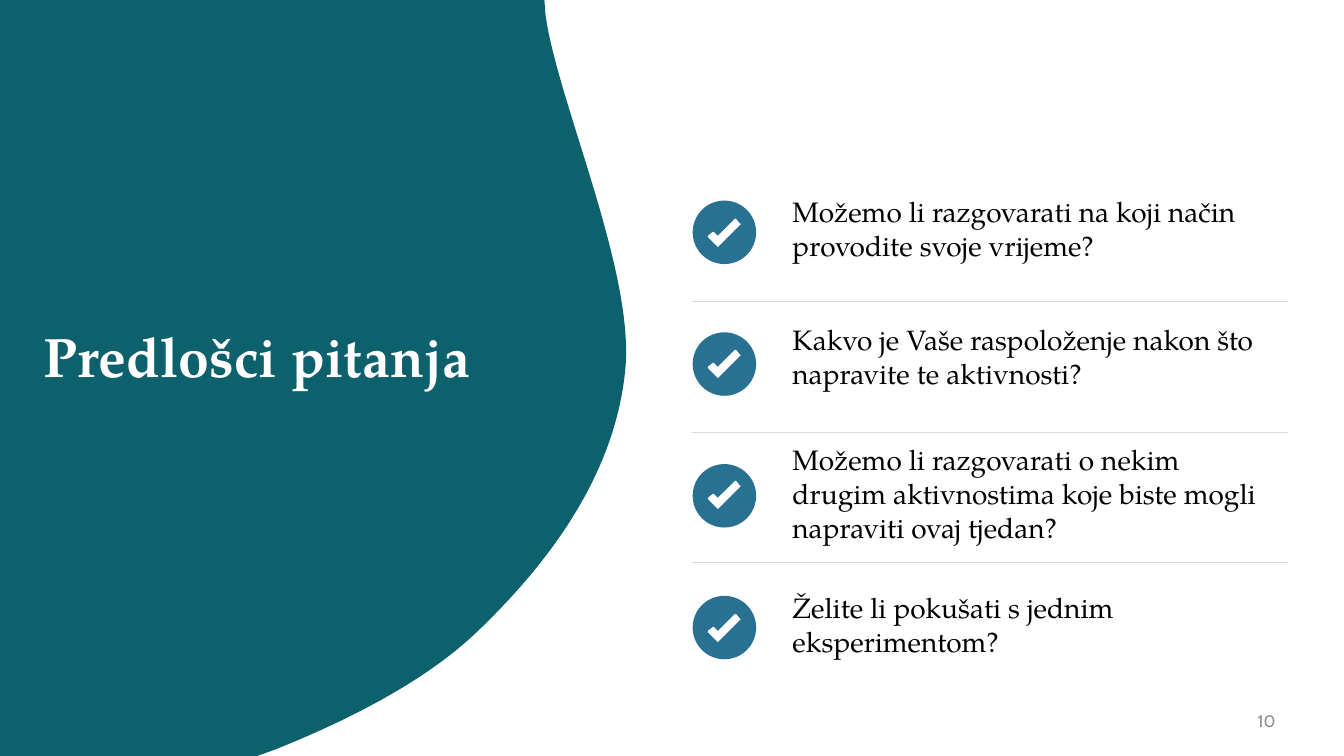
from lxml.etree import SubElement
from pptx import Presentation
from pptx.dml.color import RGBColor
from pptx.enum.shapes import MSO_CONNECTOR, MSO_SHAPE
from pptx.enum.text import MSO_ANCHOR, MSO_AUTO_SIZE, PP_ALIGN
from pptx.oxml.ns import qn
from pptx.util import Inches, Pt

COLORS = {
    "teal": "0D616C",
    "blue": "287192",
    "white": "FFFFFF",
    "black": "000000",
    "rule": "D9D9D9",
    "gray": "8C8C8C",
}
SERIF = "TeX Gyre Pagella"

QUESTIONS = [
    (2.00, 2.17, "Možemo li razgovarati na koji način provodite svoje vrijeme?"),
    (3.27, 3.47, "Kakvo je Vaše raspoloženje nakon što napravite te aktivnosti?"),
    (4.63, 4.77, "Možemo li razgovarati o nekim drugim aktivnostima koje biste mogli napraviti ovaj tjedan?"),
    (5.93, 6.09, "Želite li pokušati s jednim eksperimentom?"),
]
CHECK = [(0.32, 0.05), (0.28, 0), (0.27, 0), (0.1, 0.17), (0.06, 0.13), (0.05, 0.13),
         (0, 0.17), (0, 0.18), (0.1, 0.28), (0.32, 0.06), (0.33, 0.05)]
CURVES = [
    [(5.41, 0.14), (5.52, 0.99), (6.31, 2.71), (6.2, 3.69)],
    [(6.2, 3.69), (6.09, 4.74), (5.42, 5.61), (4.73, 6.27)],
    [(4.73, 6.27), (4.21, 6.77), (3.42, 7.16), (2.72, 7.44)],
]
CURVE_STEPS = 40


def write_text(box, text, size, color, font=SERIF, bold=False, align=PP_ALIGN.LEFT,
               line_spacing=None, insets=(0.1, 0.05, 0.1, 0.05)):
    frame = box.text_frame
    frame.word_wrap = True
    frame.auto_size = MSO_AUTO_SIZE.NONE
    frame.vertical_anchor = MSO_ANCHOR.MIDDLE
    frame.margin_left, frame.margin_top, frame.margin_right, frame.margin_bottom = map(Inches, insets)
    para = frame.paragraphs[0]
    para.alignment = align
    para.line_spacing = line_spacing
    span = para.add_run()
    span.text = text
    span.font.name = font
    span.font.size = Pt(size)
    span.font.bold = bold
    span.font.color.rgb = RGBColor.from_string(COLORS[color])


def paint(shape, color):
    shape.shadow.inherit = False
    shape.fill.solid()
    shape.fill.fore_color.rgb = RGBColor.from_string(COLORS[color])
    shape.line.fill.background()


deck = Presentation()
deck.slide_width = Inches(13.33)
deck.slide_height = Inches(7.5)
page = deck.slides.add_slide(deck.slide_layouts[5])

outline = [(Inches(5.4), 0)]
for curve in CURVES:
    for step in range(CURVE_STEPS + 1):
        t = step / CURVE_STEPS
        weights = ((1 - t) ** 3, 3 * t * (1 - t) ** 2, 3 * t ** 2 * (1 - t), t ** 3)
        outline.append([Inches(sum(w * value for w, value in zip(weights, values)))
                        for values in zip(*curve)])
outline += [(Inches(2.55), Inches(7.5)), (0, Inches(7.5))]
builder = page.shapes.build_freeform(0, 0)
builder.add_line_segments(outline, close=True)
panel = builder.convert_to_shape()
paint(panel, "teal")

title = page.shapes.title
title.left, title.top, title.width, title.height = map(Inches, (0.33, 3.04, 4.83, 1.06))
write_text(title, "Predlošci pitanja", 39.6, "white", bold=True, line_spacing=0.9)
panel.element.addnext(title.element)

number = page.shapes.add_textbox(Inches(12.3), Inches(6.95), Inches(0.45), Inches(0.4))
write_text(number, "10", 12, "gray", font="Cabin", align=PP_ALIGN.RIGHT)

for row, (text_top, check_top, question) in enumerate(QUESTIONS):
    disc = page.shapes.add_shape(MSO_SHAPE.OVAL, Inches(6.87), Inches(1.99 + 1.307 * row),
                                 Inches(0.63), Inches(0.63))
    paint(disc, "blue")

    box = page.shapes.add_textbox(Inches(7.86), Inches(text_top), Inches(4.8), Inches(0.86))
    write_text(box, question, 20, "black", insets=(0, 0, 0, 0.33))

    corners = [(Inches(7.02 + x), Inches(check_top + y)) for x, y in CHECK]
    builder = page.shapes.build_freeform(*corners[0])
    builder.add_line_segments(corners[1:], close=True)
    paint(builder.convert_to_shape(), "white")

for gap in range(len(QUESTIONS) - 1):
    height = Inches(2.99 + 1.295 * gap)
    rule = page.shapes.add_connector(MSO_CONNECTOR.STRAIGHT, Inches(6.86), height, Inches(12.77), height)
    rule.line.color.rgb = RGBColor.from_string(COLORS["rule"])
    rule.line.width = Pt(0.5)
    SubElement(rule.element.spPr, qn("a:effectLst"))

deck.save("out.pptx")
